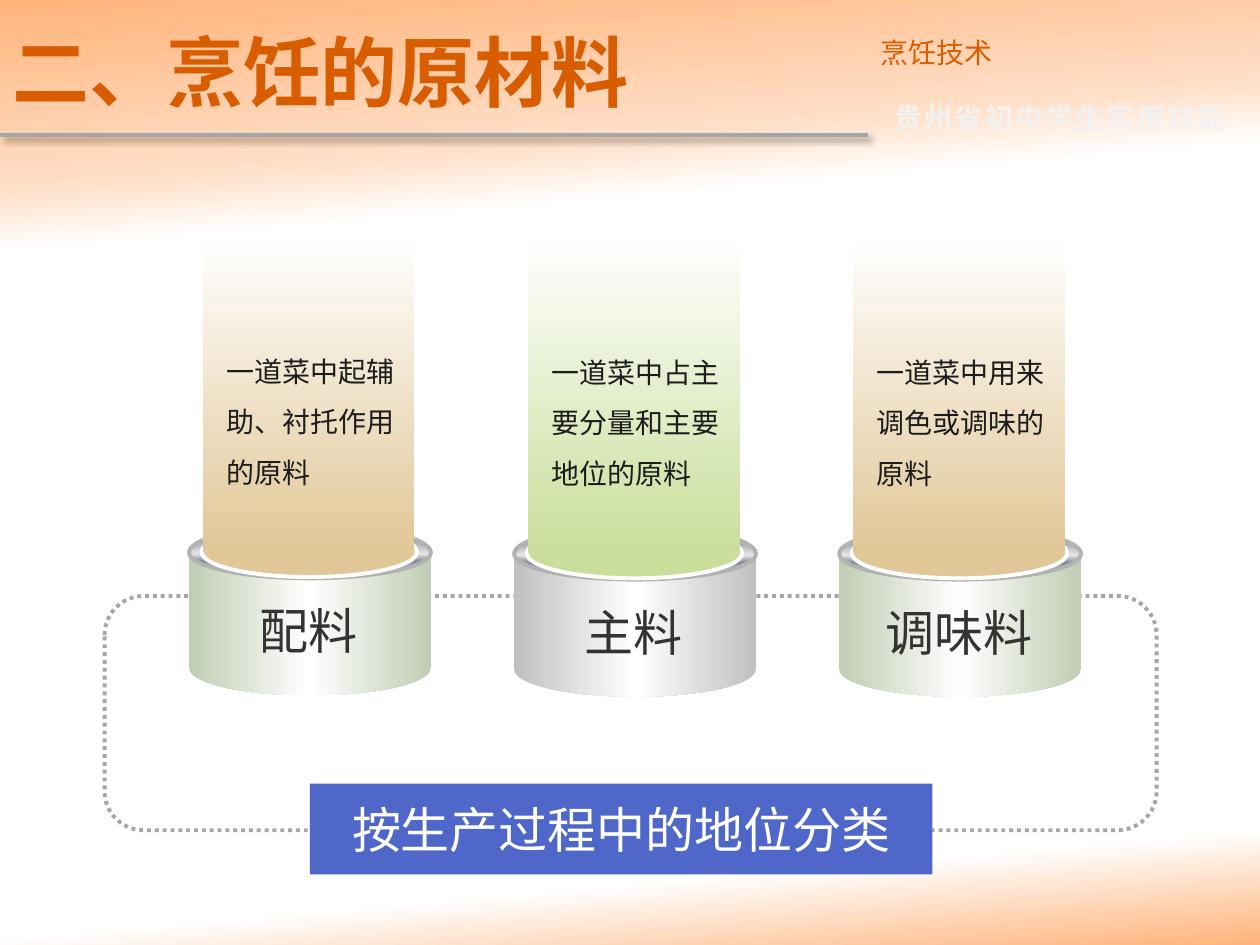
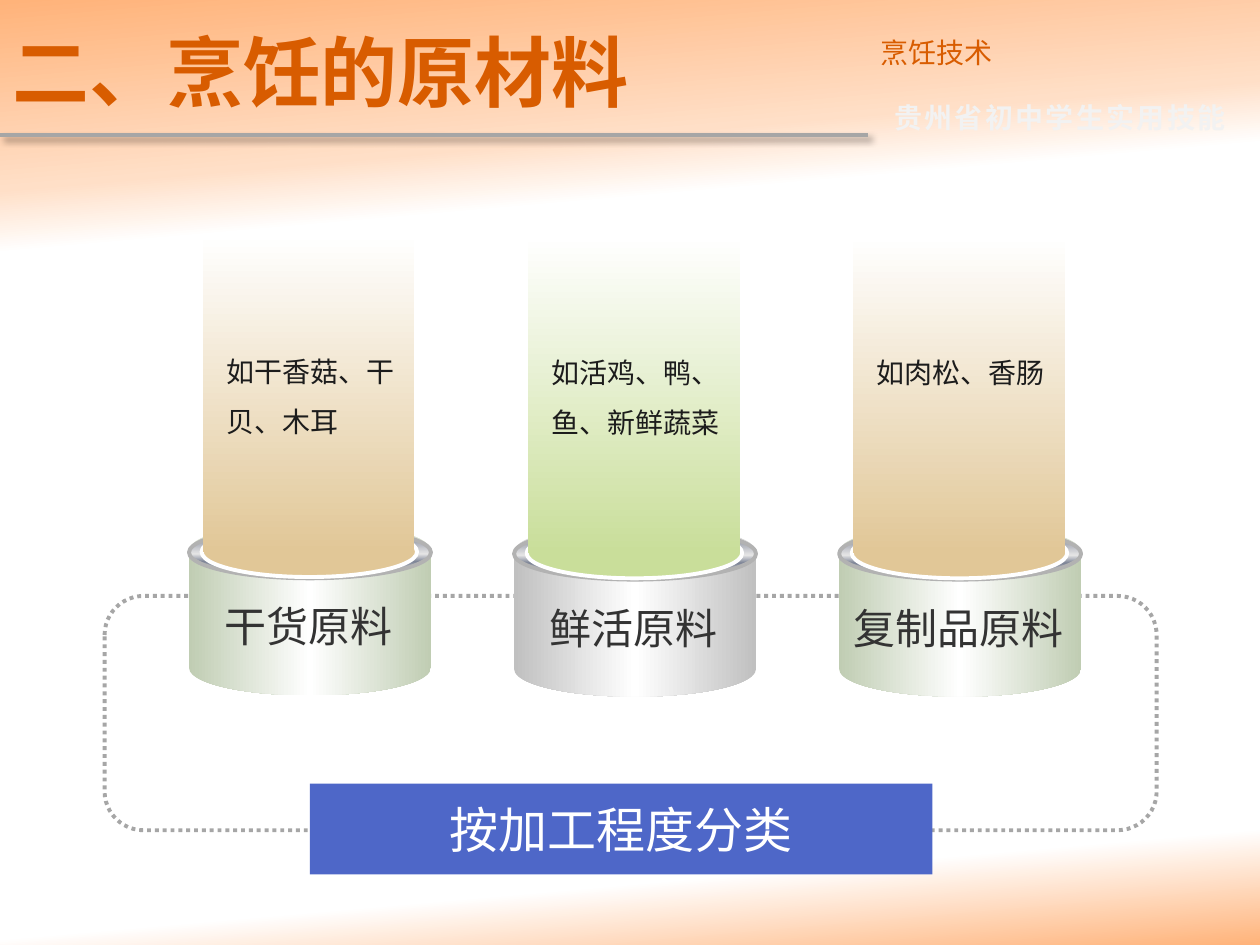
"""Build two slides that classify cooking ingredients."""
from dataclasses import dataclass
from math import ceil
from typing import Any

from lxml import etree
from pptx import Presentation
from pptx import util as u
from pptx.dml import color
from pptx.enum import dml, shapes, text
from pptx.oxml import ns

COLORS = {
    "orange": "D85C00", "peach": "FFB37A", "pale_peach": "FFDFC7",
    "white": "FFFFFF", "haze": "F2F2F2", "rule": "A6A6A6", "blue": "4E67C8",
    "ink": "1C1C1C", "label": "333333", "rim": "B2B2B2", "steel": "7D8496",
    "silver": "E6E6E6", "gray": "C0C0C0", "sage": "C0CDB3",
    "green": "C9DE9A", "tan": "E1C797", "shadow": "000000",
}
CJK = "Noto Sans CJK SC"
BACKGROUND = [(0, "peach"), (18, "pale_peach"), (24, "white"), (89, "white"), (100, "peach")]
METAL = [(0, "silver"), (15, "steel"), (53, "silver"), (68, "steel"), (93, "silver"), (100, "white")]
FIRST_LEFT, COLUMN_STEP = 1.5, 2.58
CHARACTERS_PER_LINE = 6

Box = tuple[float, float, float, float]
Stops = list[tuple[int, str]]


@dataclass(frozen=True)
class TextStyle:
    """Look of a one-paragraph text box."""
    size: int
    color: str
    font: str = CJK
    bold: bool = False
    align: Any = text.PP_ALIGN.LEFT
    line_spacing: float = 1.0
    tracking: int = 0


@dataclass(frozen=True)
class ColumnStyle:
    """Colours and vertical place of one container."""
    can: str
    beam: str
    top: float


@dataclass(frozen=True)
class Ingredient:
    """One class of ingredient."""
    label: str
    description: str


@dataclass(frozen=True)
class Classification:
    """Content of one slide."""
    basis: str
    label_size: int
    label_height: float
    ingredients: tuple[Ingredient, ...]


TITLE = TextStyle(44, "orange", bold=True)
COURSE = TextStyle(16, "orange")
SERIES = TextStyle(16, "haze", bold=True, tracking=140)
BASIS = TextStyle(28, "white", "Arial", align=text.PP_ALIGN.CENTER)
DESCRIPTION = TextStyle(16, "ink", line_spacing=1.5)

COLUMNS = (
    ColumnStyle("sage", "tan", 4.15),
    ColumnStyle("gray", "green", 4.16),
    ColumnStyle("sage", "tan", 4.16),
)
CLASSIFICATIONS = (
    Classification("按生产过程中的地位分类", 28, 0.57, (
        Ingredient("配料", "一道菜中起辅助、衬托作用的原料"),
        Ingredient("主料", "一道菜中占主要分量和主要地位的原料"),
        Ingredient("调味料", "一道菜中用来调色或调味的原料"),
    )),
    Classification("按加工程度分类", 24, 0.51, (
        Ingredient("干货原料", "如干香菇、干贝、木耳"),
        Ingredient("鲜活原料", "如活鸡、鸭、鱼、新鲜蔬菜"),
        Ingredient("复制品原料", "如肉松、香肠"),
    )),
)


def rgb(name: str) -> color.RGBColor:
    """Look up a named colour."""
    return color.RGBColor.from_string(COLORS[name])


def add_child(parent: Any, tag: str, **attributes: Any) -> Any:
    """Append a DrawingML element."""
    values = {key: str(value) for key, value in attributes.items()}
    return etree.SubElement(parent, ns.qn(tag), values)


def set_gradient(fill: Any, element: Any, stops: Stops, angle: int) -> None:
    """Give the fill inside an element a multi-stop linear gradient."""
    fill.gradient()
    gradient = element.find(".//" + ns.qn("a:gradFill"))
    stop_list = gradient.find(ns.qn("a:gsLst"))
    for old_stop in list(stop_list):
        stop_list.remove(old_stop)
    for position, name in stops:
        stop = add_child(stop_list, "a:gs", pos=position * 1000)
        add_child(stop, "a:srgbClr", val=COLORS[name])
    gradient.find(ns.qn("a:lin")).set("ang", str(angle * 60000))


def add_shape(parent: Any, kind: Any, box: Box, fill: str | Stops | None = None,
              angle: int = 90, line: str | None = None) -> Any:
    """Add a preset shape with a plain, gradient or empty fill."""
    shape = parent.add_shape(kind, *map(u.Inches, box))
    shape.shadow.inherit = False
    if fill is None:
        shape.fill.background()
    elif isinstance(fill, str):
        shape.fill.solid()
        shape.fill.fore_color.rgb = rgb(fill)
    else:
        set_gradient(shape.fill, shape.element.spPr, fill, angle)
    if line:
        shape.line.color.rgb = rgb(line)
        shape.line.width = u.Pt(2.25)
    else:
        shape.line.fill.background()
    return shape


def add_text(parent: Any, content: str, box: Box, style: TextStyle,
             grow: bool = True) -> None:
    """Add a wrapped text box with one styled paragraph."""
    frame = parent.add_textbox(*map(u.Inches, box)).text_frame
    frame.word_wrap = True
    if grow:
        frame.auto_size = text.MSO_AUTO_SIZE.SHAPE_TO_FIT_TEXT
    else:
        frame.auto_size = text.MSO_AUTO_SIZE.NONE
        frame.vertical_anchor = text.MSO_ANCHOR.MIDDLE
    paragraph = frame.paragraphs[0]
    paragraph.text = content
    paragraph.alignment = style.align
    paragraph.line_spacing = style.line_spacing
    font = paragraph.font
    font.size, font.bold, font.name = u.Pt(style.size), style.bold, style.font
    font.color.rgb = rgb(style.color)
    properties = paragraph._p.pPr.find(ns.qn("a:defRPr"))
    add_child(properties, "a:ea", typeface=CJK)
    if style.tracking:
        properties.set("spc", str(style.tracking))


def add_title_rule(slide: Any) -> None:
    """Draw the shadowed line below the title."""
    rule = slide.shapes.add_connector(
        shapes.MSO_CONNECTOR.STRAIGHT, u.Inches(0), u.Inches(1.07), u.Inches(6.89), u.Inches(1.07))
    rule.line.color.rgb = rgb("rule")
    rule.line.width = u.Pt(2.25)
    effects = add_child(rule.element.spPr, "a:effectLst")
    shadow = add_child(effects, "a:outerShdw", blurRad=u.Pt(4), dist=u.Pt(3),
                       dir=45 * 60000, algn="tl", rotWithShape=0)
    shadow_color = add_child(shadow, "a:srgbClr", val=COLORS["shadow"])
    add_child(shadow_color, "a:alpha", val=40000)


def add_frame(slide: Any) -> None:
    """Draw what all slides share."""
    set_gradient(slide.background.fill, slide.element, BACKGROUND, 85)
    loop = add_shape(slide.shapes, shapes.MSO_SHAPE.ROUNDED_RECTANGLE,
                     (0.83, 4.73, 8.35, 1.86), line="rule")
    loop.line.dash_style = dml.MSO_LINE.ROUND_DOT
    add_title_rule(slide)
    add_text(slide.shapes, "烹饪技术", (6.89, 0.23, 3.11, 0.37), COURSE)
    add_text(slide.shapes, "贵州省初中学生实用技能", (7, 0.75, 3, 0.37), SERIES)
    add_text(slide.shapes, "二、烹饪的原材料", (0, 0.05, 6.89, 1.02), TITLE, grow=False)


def add_column(slide: Any, left: float, style: ColumnStyle, ingredient: Ingredient,
               label_size: int, label_height: float) -> None:
    """Draw one container with its beam, description and label."""
    group = slide.shapes.add_group_shape().shapes
    top = style.top
    can = add_shape(group, shapes.MSO_SHAPE.CAN, (left, top, 1.92, 1.37),
                    [(0, style.can), (50, "white"), (100, style.can)], angle=0)
    can.adjustments[0] = 0.32
    oval = shapes.MSO_SHAPE.OVAL
    add_shape(group, oval, (left, top + 0.03, 1.92, 0.41), METAL, line="rim")
    add_shape(group, oval, (left + 0.1, top + 0.03, 1.71, 0.4), style.beam, line="white")
    add_shape(group, shapes.MSO_SHAPE.RECTANGLE, (left + 0.11, top - 2.29, 1.68, 2.52),
              [(0, "white"), (100, style.beam)])
    line_count = ceil(len(ingredient.description) / CHARACTERS_PER_LINE)
    add_text(group, ingredient.description,
             (left + 0.2, top - 1.52, 1.59, 0.05 + 0.41 * line_count), DESCRIPTION)
    label_style = TextStyle(label_size, "label", align=text.PP_ALIGN.CENTER)
    add_text(group, ingredient.label, (left - 0.01, top + 0.57, 1.92, label_height), label_style)


def add_classification(presentation: Any, classification: Classification) -> None:
    """Add one complete slide."""
    slide = presentation.slides.add_slide(presentation.slide_layouts[6])
    add_frame(slide)
    add_shape(slide.shapes, shapes.MSO_SHAPE.RECTANGLE, (2.46, 6.22, 4.94, 0.72), "blue")
    add_text(slide.shapes, classification.basis, (2.48, 6.3, 4.9, 0.57), BASIS)
    for index, (style, ingredient) in enumerate(zip(COLUMNS, classification.ingredients)):
        add_column(slide, FIRST_LEFT + index * COLUMN_STEP, style, ingredient,
                   classification.label_size, classification.label_height)


def main() -> None:
    """Build and save the presentation."""
    presentation = Presentation()
    presentation.slide_width, presentation.slide_height = u.Inches(10), u.Inches(7.5)
    for classification in CLASSIFICATIONS:
        add_classification(presentation, classification)
    presentation.save("out.pptx")


if __name__ == "__main__":
    main()
